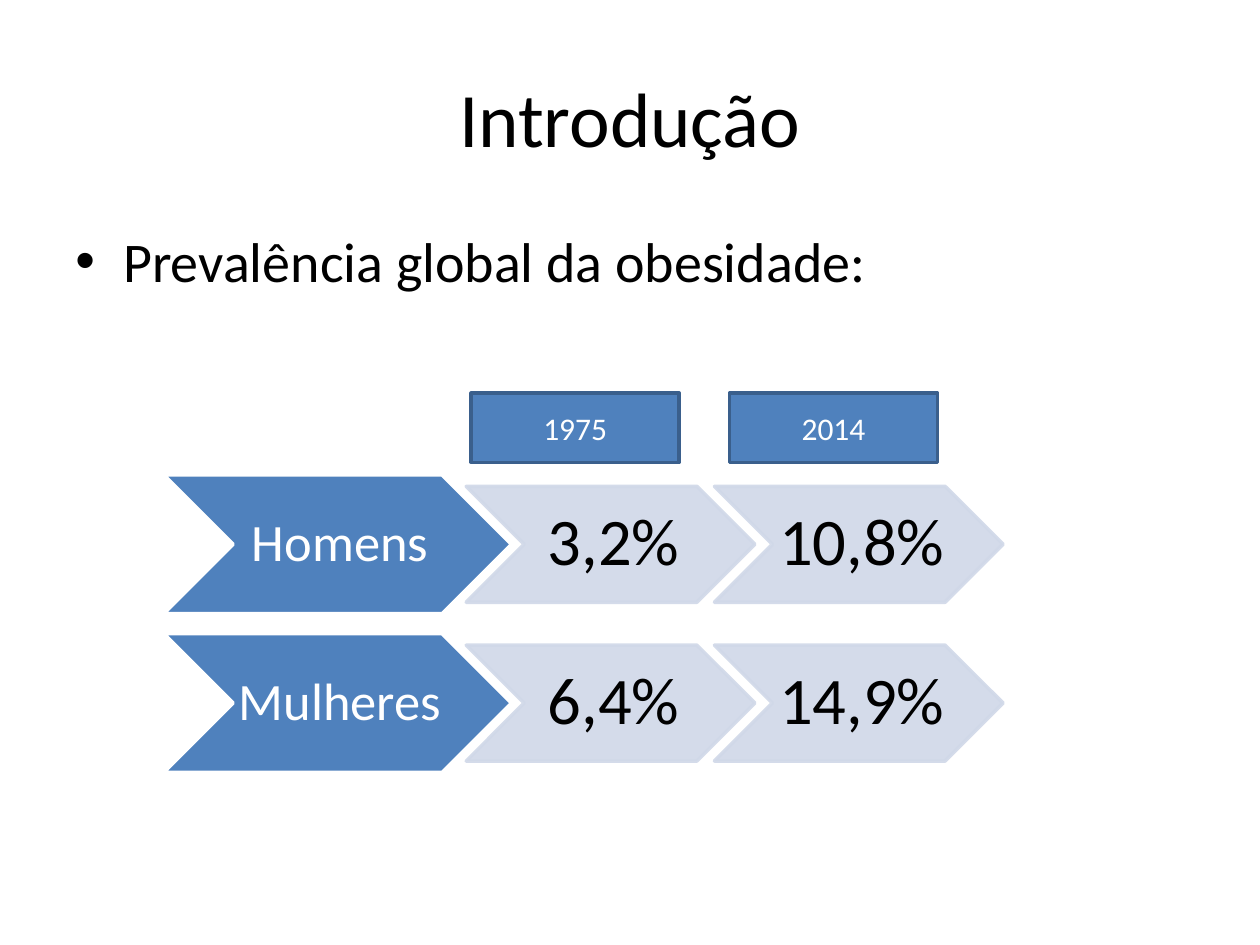
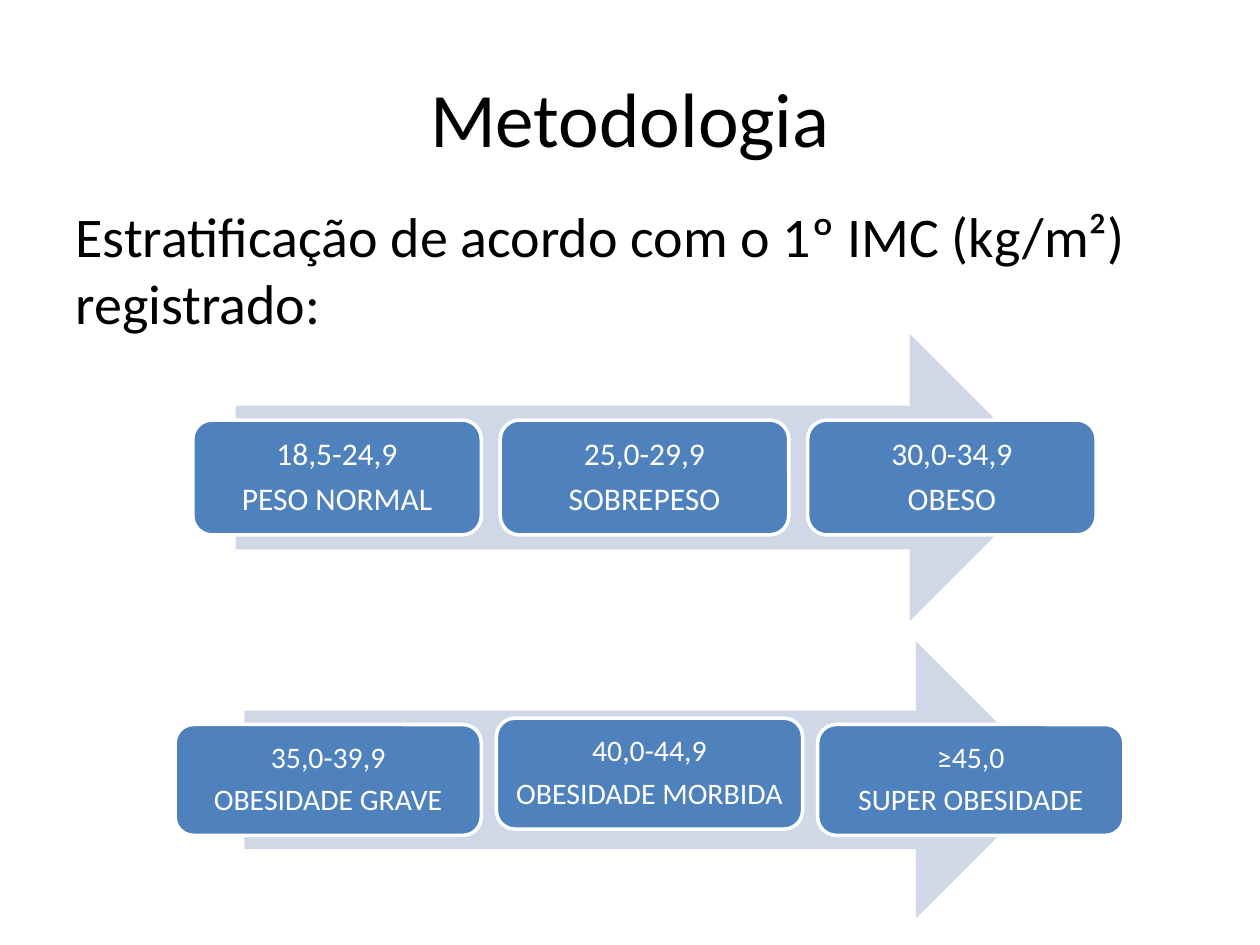
from lxml.etree import SubElement
from pptx import Presentation
from pptx.dml.color import RGBColor
from pptx.enum.shapes import MSO_SHAPE
from pptx.enum.text import MSO_ANCHOR, PP_ALIGN
from pptx.oxml.ns import qn
from pptx.util import Inches, Pt

BLUE = RGBColor(0x4F, 0x81, 0xBD)
NAVY = RGBColor(0x3A, 0x5F, 0x8C)
PALE = RGBColor(0xD0, 0xD8, 0xE8)
WHITE = RGBColor(0xFF, 0xFF, 0xFF)
BLACK = RGBColor(0, 0, 0)
FONT = "Calibri"


def write(frame, lines, size, color, align=PP_ALIGN.CENTER):
    """Fill a text frame with one paragraph per line and return them."""
    paras = []
    for i, line in enumerate(lines):
        para = frame.add_paragraph() if i else frame.paragraphs[0]
        para.alignment = align
        run = para.add_run()
        run.text = line
        run.font.size = Pt(size)
        run.font.name = FONT
        run.font.color.rgb = color
        paras.append(para)
    return paras


def add_text(slide, box, text, size, align, anchor):
    """Add a wrapped black text box and return its paragraph."""
    frame = slide.shapes.add_textbox(*map(Inches, box)).text_frame
    frame.word_wrap = True
    frame.vertical_anchor = anchor
    return write(frame, [text], size, BLACK, align)[0]


def add_block(slide, kind, box, fill, line=None):
    """Add a filled preset shape, outlined if a line colour is given."""
    shape = slide.shapes.add_shape(kind, *map(Inches, box))
    shape.shadow.inherit = False
    shape.fill.solid()
    shape.fill.fore_color.rgb = fill
    if line is None:
        shape.line.fill.background()
    else:
        shape.line.color.rgb = line
        shape.line.width = Pt(2)
    return shape


def label(shape, lines, size, color, insets, wrap=True):
    """Centre tightly spaced lines inside a diagram shape."""
    frame = shape.text_frame
    frame.word_wrap = wrap
    frame.vertical_anchor = MSO_ANCHOR.MIDDLE
    (frame.margin_left, frame.margin_top,
     frame.margin_right, frame.margin_bottom) = map(Inches, insets)
    for para in write(frame, lines, size, color):
        para.line_spacing = 0.9
        para.space_after = Pt(size * 0.35)


def soften(shape):
    """Make the fill and line of a shape 90% opaque."""
    for tint in shape._element.spPr.iter(qn("a:srgbClr")):
        SubElement(tint, qn("a:alpha"), val="90000")


def add_slide(deck, title, body, top, bullet=False):
    """Add a slide with a centred title and one body line."""
    slide = deck.slides.add_slide(deck.slide_layouts[6])
    add_text(slide, (0.5, 0.3, 9, 1.25), title, 44,
             PP_ALIGN.CENTER, MSO_ANCHOR.MIDDLE)
    para = add_text(slide, (0.5, top, 9, 4.95), body, 32,
                    PP_ALIGN.LEFT, MSO_ANCHOR.TOP)
    para.space_before = Pt(6.4)
    if bullet:
        props = para._p.get_or_add_pPr()
        props.set("marL", str(Inches(0.38)))
        props.set("indent", str(Inches(-0.38)))
        SubElement(props, qn("a:buFont"), typeface="Arial")
        SubElement(props, qn("a:buChar"), char="•")
    return slide


def add_rates(slide, box, name, rates):
    """Draw a group's chevron followed by its rate chevrons."""
    left, top, width, height = box
    head = add_block(slide, MSO_SHAPE.CHEVRON, box, BLUE, WHITE)
    label(head, [name], 30, WHITE, (0.04, 0.02, 0, 0.02), False)
    for i, rate in enumerate(rates):
        spot = (left + 2.4 + i * 1.97, top + 0.09,
                width * 0.83, height - 0.18)
        step = add_block(slide, MSO_SHAPE.CHEVRON, spot, PALE, PALE)
        soften(step)
        label(step, [rate], 38, BLACK, (0.05, 0.03, 0, 0.03), False)


def add_years(slide, box, years):
    """Draw the year boxes above the rate columns."""
    left, top, width, height = box
    for i, year in enumerate(years):
        spot = (left + i * 2.05, top, width, height)
        tag = add_block(slide, MSO_SHAPE.RECTANGLE, spot, BLUE, NAVY)
        tag.text_frame.vertical_anchor = MSO_ANCHOR.MIDDLE
        write(tag.text_frame, [year], 18, WHITE)


def add_scale(slide, box, cards, width, gap, size, lift=0):
    """Draw an arrow with class cards centred on it, the middle one lifted."""
    left, top, span, tall = box
    add_block(slide, MSO_SHAPE.RIGHT_ARROW, box, PALE)
    count = len(cards)
    start = left + (span - count * width - (count - 1) * gap) / 2
    for i, lines in enumerate(cards):
        rise = lift if i == count // 2 else 0
        spot = (start + i * (width + gap), top + 0.3 * tall - rise,
                width, 0.4 * tall)
        card = add_block(slide, MSO_SHAPE.ROUNDED_RECTANGLE, spot, BLUE, WHITE)
        label(card, lines, size, WHITE, (0.07,) * 4)


def build_intro(deck):
    """Build the slide on the prevalence of obesity."""
    slide = add_slide(deck, "Introdução", "Prevalência global da obesidade:",
                      1.75, True)
    groups = [("Homens", ["3,2%", "10,8%"]), ("Mulheres", ["6,4%", "14,9%"])]
    for i, (name, rates) in enumerate(groups):
        add_rates(slide, (1.3, 3.77 + i * 1.26, 2.76, 1.1), name, rates)
    add_years(slide, (3.74, 3.12, 1.65, 0.55), ["1975", "2014"])


def build_method(deck):
    """Build the slide on the classes of body mass index."""
    slide = add_slide(
        deck, "Metodologia",
        "Estratificação de acordo com o 1º IMC (kg/m²) registrado:", 1.55)
    add_scale(slide, (1.87, 2.65, 6.49, 2.28), [
        ("18,5-24,9", "PESO NORMAL"),
        ("25,0-29,9", "SOBREPESO"),
        ("30,0-34,9", "OBESO"),
    ], 2.29, 0.15, 18)
    add_scale(slide, (1.94, 5.09, 6.43, 2.2), [
        ("35,0-39,9", "OBESIDADE GRAVE"),
        ("40,0-44,9", "OBESIDADE MORBIDA"),
        ("≥45,0", "SUPER OBESIDADE"),
    ], 2.43, 0.12, 17, 0.05)


def main():
    """Build and save the deck."""
    deck = Presentation()
    deck.slide_width, deck.slide_height = Inches(10), Inches(7.5)
    build_intro(deck)
    build_method(deck)
    deck.save("out.pptx")


if __name__ == "__main__":
    main()
